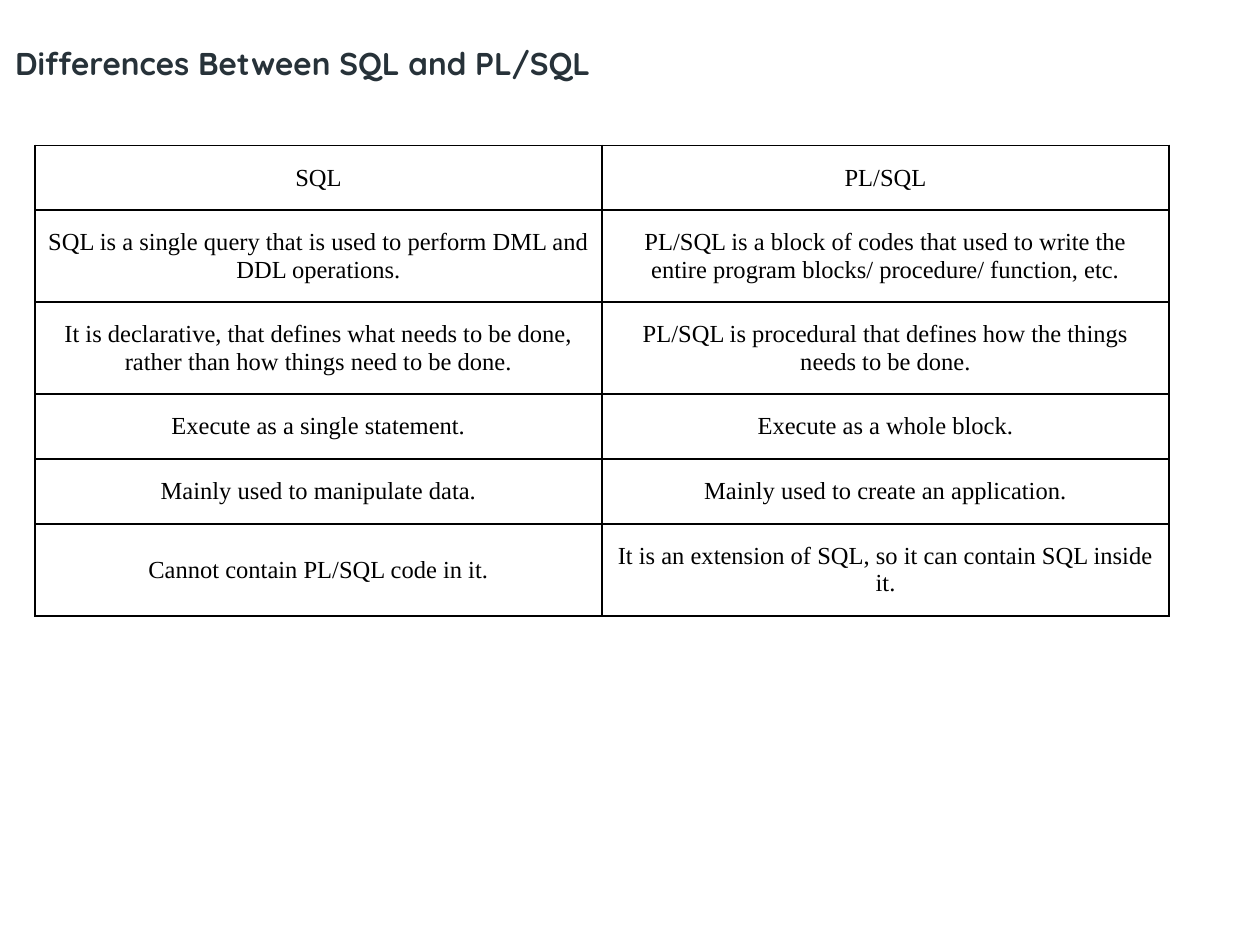
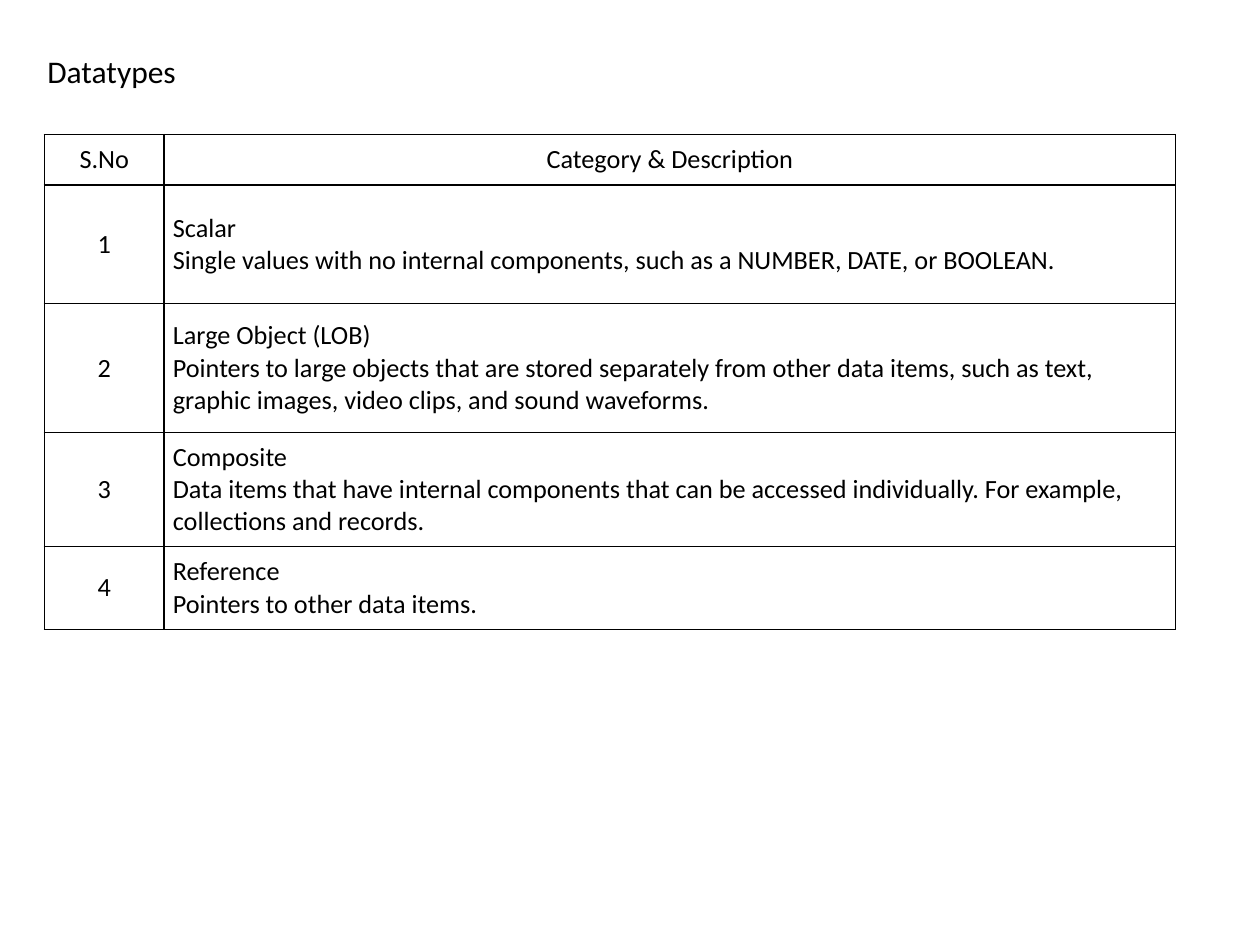
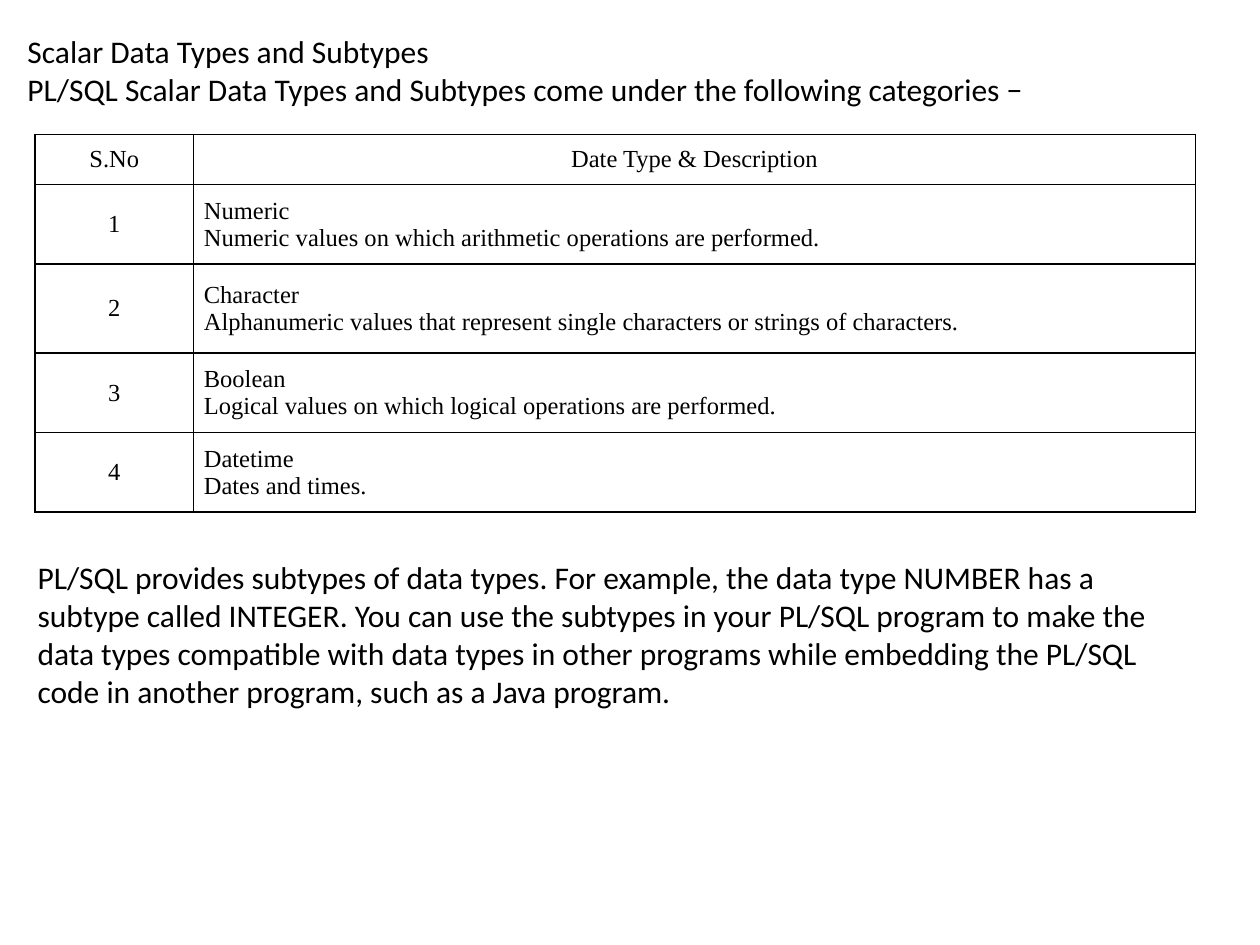
"""Build three slides on PL/SQL and its data types."""
from lxml import etree
from pptx import Presentation
from pptx import util as u
from pptx.dml import color
from pptx.enum import shapes, text
from pptx.oxml import ns

HUES = {"ink": "000000", "slate": "273239", "paper": "FFFFFF"}
SANS, SERIF, ROUND = "Calibri", "Times New Roman", "Quicksand"
Pt = u.Pt


def hue(name):
    return color.RGBColor.from_string(HUES[name])


class Deck:
    def __init__(self):
        self.prs = Presentation()
        self.prs.slide_width, self.prs.slide_height = Pt(720), Pt(540)
        self.page = None

    def slide(self):
        self.page = self.prs.slides.add_slide(self.prs.slide_layouts[6])

    def style(self, frame, font, size, ink="ink", bold=False, align=text.PP_ALIGN.LEFT):
        for para in frame.paragraphs:
            para.alignment = align
            for run in para.runs:
                run.font.name, run.font.size = font, Pt(size)
                run.font.bold = bold
                run.font.color.rgb = hue(ink)

    def note(self, words, left, top, width, height):
        box = self.page.shapes.add_textbox(Pt(left), Pt(top), Pt(width), Pt(height))
        box.text_frame.word_wrap = True
        box.text_frame.text = words
        self.style(box.text_frame, SANS, 18)

    def title(self, words, left, top, width, height):
        bar = self.page.shapes.add_shape(
            shapes.MSO_SHAPE.RECTANGLE, Pt(left), Pt(top), Pt(width), Pt(height))
        bar.shadow.inherit = False
        bar.fill.solid()
        bar.fill.fore_color.rgb = hue("paper")
        bar.line.fill.background()
        frame = bar.text_frame
        frame.margin_left = frame.margin_right = frame.margin_top = frame.margin_bottom = 0
        frame.vertical_anchor = text.MSO_ANCHOR.TOP
        frame.text = words
        self.style(frame, ROUND, 18, "slate", bold=True)

    def edge(self, cell):
        props = cell._tc.get_or_add_tcPr()
        for side in ("lnL", "lnR", "lnT", "lnB"):
            line = etree.SubElement(props, ns.qn("a:" + side), w=str(Pt(1)))
            fill = etree.SubElement(line, ns.qn("a:solidFill"))
            etree.SubElement(fill, ns.qn("a:srgbClr"), val=HUES["ink"])

    def table(self, rows, left, top, cols, highs, font, size, pad, center=False):
        grid = self.page.shapes.add_table(
            len(rows), len(cols), Pt(left), Pt(top), Pt(sum(cols)), Pt(sum(highs))).table
        grid.first_row = grid.horz_banding = False
        for col, width in zip(grid.columns, cols):
            col.width = Pt(width)
        for r, (row, high) in enumerate(zip(rows, highs)):
            grid.rows[r].height = Pt(high)
            for c, words in enumerate(row):
                cell = grid.cell(r, c)
                self.edge(cell)
                cell.fill.background()
                cell.vertical_anchor = text.MSO_ANCHOR.MIDDLE
                cell.margin_left = cell.margin_right = Pt(pad[0])
                cell.margin_top = cell.margin_bottom = Pt(pad[1])
                cell.text_frame.text = words
                mid = center or r == 0 or c == 0
                align = text.PP_ALIGN.CENTER if mid else text.PP_ALIGN.LEFT
                self.style(cell.text_frame, font, size, align=align)


def count(head, items):
    return [("S.No", head)] + [(str(n), item) for n, item in enumerate(items, 1)]


def main():
    deck = Deck()

    deck.slide()
    pairs = [
        ("SQL", "PL/SQL"),
        ("SQL is a single query that is used to perform DML and DDL operations.",
         "PL/SQL is a block of codes that used to write the entire program blocks/ "
         "procedure/ function, etc."),
        ("It is declarative, that defines what needs to be done, rather than how "
         "things need to be done.",
         "PL/SQL is procedural that defines how the things needs to be done."),
        ("Execute as a single statement.", "Execute as a whole block."),
        ("Mainly used to manipulate data.", "Mainly used to create an application."),
        ("Cannot contain PL/SQL code in it.",
         "It is an extension of SQL, so it can contain SQL inside it."),
    ]
    low, tall = 36.5, 52
    deck.table(pairs, 20, 83, [324, 324], [low, tall, tall, low, low, tall],
               SERIF, 14, (7.2, 10.8), center=True)
    deck.title("Differences Between SQL and PL/SQL", 8.6, 25.2, 669, 44)

    deck.slide()
    kinds = count("Category & Description", [
        "Scalar\nSingle values with no internal components, such as a NUMBER, DATE, or BOOLEAN.",
        "Large Object (LOB)\nPointers to large objects that are stored separately from other "
        "data items, such as text, graphic images, video clips, and sound waveforms.",
        "Composite\nData items that have internal components that can be accessed "
        "individually. For example, collections and records.",
        "Reference\nPointers to other data items.",
    ])
    deck.table(kinds, 25.4, 77, [68.4, 578], [28.8, 67.7, 73.7, 64, 47.5],
               SANS, 15, (5, 5))
    deck.note("Datatypes", 20, 26, 657, 29)

    deck.slide()
    deck.note("Scalar Data Types and Subtypes\nPL/SQL Scalar Data Types and Subtypes "
              "come under the following categories −", 8.6, 15, 686, 73)
    types = count("Date Type & Description", [
        "Numeric\nNumeric values on which arithmetic operations are performed.",
        "Character\nAlphanumeric values that represent single characters or strings "
        "of characters.",
        "Boolean\nLogical values on which logical operations are performed.",
        "Datetime\nDates and times.",
    ])
    deck.table(types, 20, 77, [90.7, 572.4], [28.4, 45.5, 50.8, 45.5, 45.5],
               SERIF, 14, (5.8, 5.8))
    deck.note("PL/SQL provides subtypes of data types. For example, the data type NUMBER "
              "has a subtype called INTEGER. You can use the subtypes in your PL/SQL "
              "program to make the data types compatible with data types in other programs "
              "while embedding the PL/SQL code in another program, such as a Java program.",
              14.4, 315.4, 680, 94)

    deck.prs.save("out.pptx")


if __name__ == "__main__":
    main()
